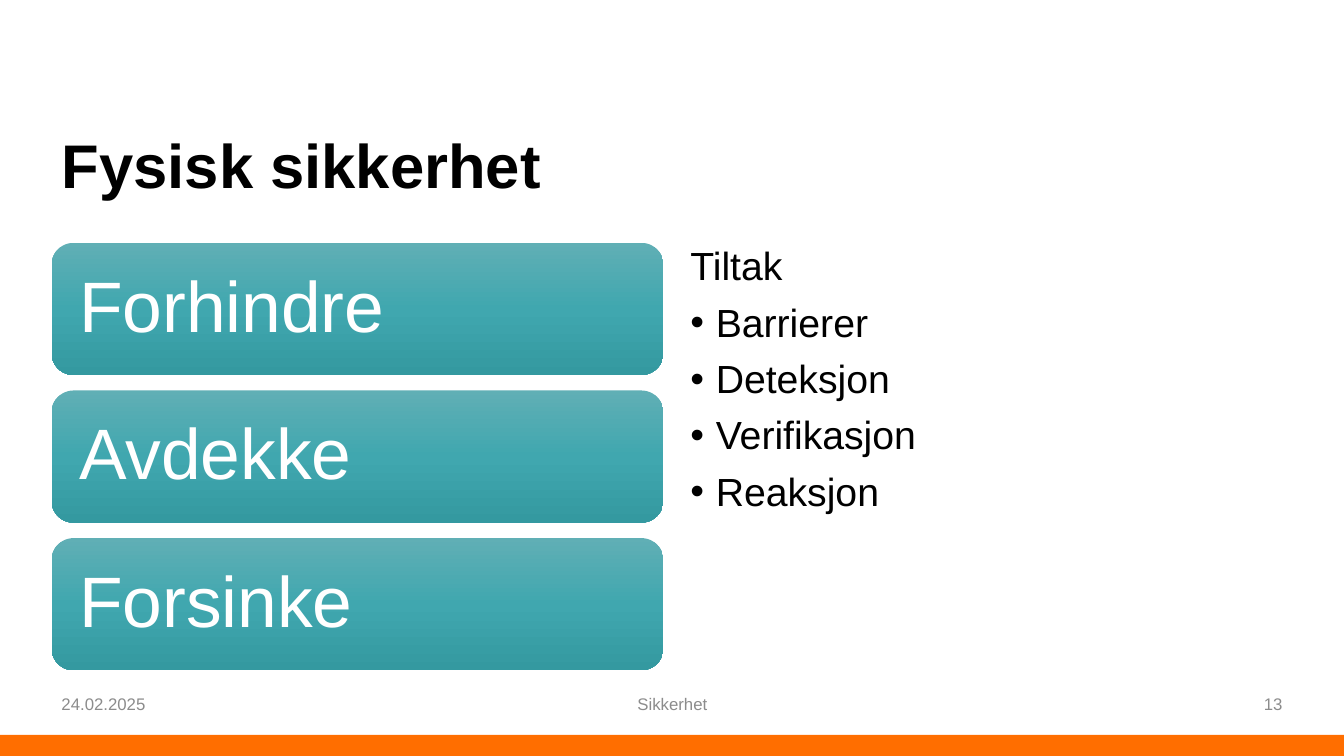
"""Build the slide on physical security."""
import pptx
import pptx.dml.color
import pptx.enum.shapes
import pptx.enum.text
import pptx.oxml
import pptx.oxml.ns
import pptx.util

Cm = pptx.util.Cm
Pt = pptx.util.Pt
ALIGN = pptx.enum.text.PP_ALIGN
ANCHOR = pptx.enum.text.MSO_ANCHOR
SHAPE = pptx.enum.shapes.MSO_SHAPE
HEX = {"bar": "FF6E00", "ink": "000000", "grey": "8C8C8C", "white": "FFFFFF",
       "top": "60AFB5", "mid": "40A7AF", "low": "3499A0"}
STOPS = [(0, "top"), (50, "mid"), (100, "low")]


def color(name):
    return pptx.dml.color.RGBColor.from_string(HEX[name])


def write(para, text, size, ink, bold=False, align=ALIGN.LEFT):
    para.alignment = align
    run = para.add_run()
    run.text = text
    run.font.name = "Arial"
    run.font.size = Pt(size)
    run.font.bold = bold
    run.font.color.rgb = color(ink)


def set_frame(shape, anchor):
    frame = shape.text_frame
    frame.word_wrap = True
    frame.auto_size = pptx.enum.text.MSO_AUTO_SIZE.NONE
    frame.vertical_anchor = anchor
    return frame


def add_bar(slide):
    bar = slide.shapes.add_shape(SHAPE.RECTANGLE, 0, Cm(18.52), Cm(33.87), Cm(0.53))
    bar.shadow.inherit = False
    bar.fill.solid()
    bar.fill.fore_color.rgb = color("bar")
    bar.line.fill.background()


def add_title(slide, text):
    title = slide.shapes.title
    title.left, title.top = Cm(1.3), Cm(2.41)
    title.width, title.height = Cm(31.27), Cm(3.68)
    para = set_frame(title, ANCHOR.MIDDLE).paragraphs[0]
    para.line_spacing = 0.9
    write(para, text, 44, "ink", bold=True)


def add_note(slide, left, width, text, align):
    box = slide.shapes.add_textbox(Cm(left), Cm(17.22), Cm(width), Cm(1.02))
    para = set_frame(box, ANCHOR.MIDDLE).paragraphs[0]
    write(para, text, 12, "grey", align=align)


def add_bullet(para):
    props = para._p.get_or_add_pPr()
    props.set("marL", str(Cm(0.64)))
    props.set("indent", str(-Cm(0.64)))
    space = pptx.oxml.ns.nsdecls("a")
    props.append(pptx.oxml.parse_xml(f'<a:buFont {space} typeface="Arial"/>'))
    props.append(pptx.oxml.parse_xml(f'<a:buChar {space} char="•"/>'))


def add_list(slide, head, items):
    box = slide.shapes.add_textbox(Cm(17.15), Cm(6.1), Cm(15.42), Cm(10.82))
    frame = set_frame(box, ANCHOR.TOP)
    first = frame.paragraphs[0]
    first.line_spacing = 0.9
    write(first, head, 28, "ink")
    for item in items:
        para = frame.add_paragraph()
        add_bullet(para)
        para.line_spacing = 0.9
        para.space_before = Pt(10)
        write(para, item, 28, "ink")


def shade(shape):
    shape.fill.gradient()
    shape.fill.gradient_angle = 270
    stops = shape._element.spPr.find(".//" + pptx.oxml.ns.qn("a:gsLst"))
    for stop in list(stops):
        stops.remove(stop)
    space = pptx.oxml.ns.nsdecls("a")
    for place, name in STOPS:
        stops.append(pptx.oxml.parse_xml(
            f'<a:gs {space} pos="{place * 1000}"><a:srgbClr val="{HEX[name]}"/></a:gs>'))


def add_card(slide, top, text):
    card = slide.shapes.add_shape(
        SHAPE.ROUNDED_RECTANGLE, Cm(1.3), Cm(top), Cm(15.42), Cm(3.33))
    card.shadow.inherit = False
    shade(card)
    card.line.fill.background()
    frame = set_frame(card, ANCHOR.MIDDLE)
    frame.margin_left = frame.margin_right = Cm(0.53)
    frame.margin_top = frame.margin_bottom = Cm(0.53)
    para = frame.paragraphs[0]
    para.line_spacing = 0.9
    write(para, text, 51, "white")


def main():
    deck = pptx.Presentation()
    deck.slide_width, deck.slide_height = Cm(33.87), Cm(19.05)
    slide = deck.slides.add_slide(deck.slide_layouts[5])
    add_bar(slide)
    add_title(slide, "Fysisk sikkerhet")
    add_note(slide, 1.3, 7.62, "24.02.2025", ALIGN.LEFT)
    add_note(slide, 11.23, 11.43, "Sikkerhet", ALIGN.CENTER)
    add_note(slide, 24.95, 7.62, "13", ALIGN.RIGHT)
    add_list(slide, "Tiltak", ["Barrierer", "Deteksjon", "Verifikasjon", "Reaksjon"])
    for row, text in enumerate(["Forhindre", "Avdekke", "Forsinke"]):
        add_card(slide, 6.12 + row * 3.72, text)
    deck.save("out.pptx")


if __name__ == "__main__":
    main()
